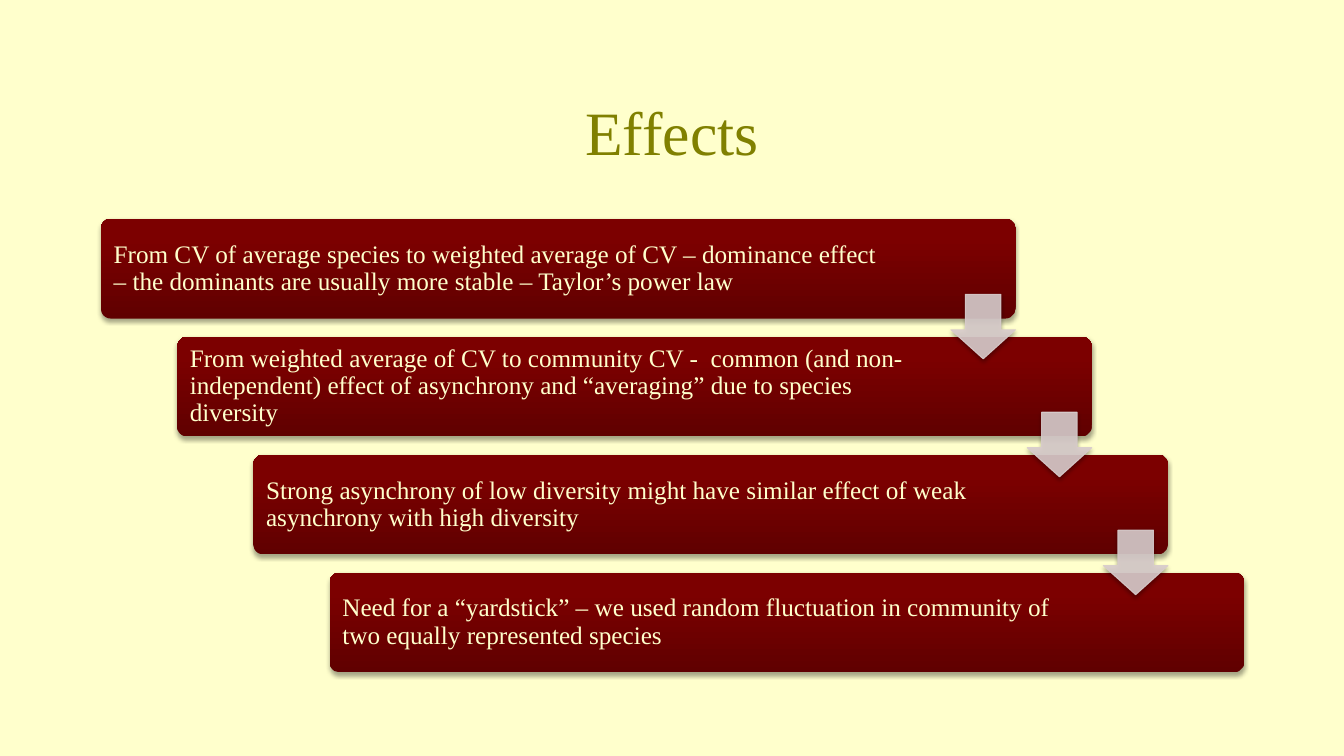
from copy import deepcopy
from dataclasses import dataclass

from lxml.etree import SubElement
from pptx import Presentation
from pptx.dml.color import RGBColor as Rgb
from pptx.enum.shapes import MSO_SHAPE as Shape
from pptx.enum.text import MSO_ANCHOR as Anchor, PP_ALIGN as Align
from pptx.oxml.ns import qn
from pptx.util import Inches, Pt


@dataclass(frozen=True)
class Theme:
    font: str = "Times New Roman"
    title_size: int = 44
    step_size: int = 18
    background: str = "FFFFCC"
    title: str = "808000"
    step_text: str = "FFFFCC"
    arrow: str = "D8CCCC"
    # Stops run from the bottom of a box to its top
    box_stops: tuple = ((0, "600000"), (0.8, "7C0000"), (1, "7D0000"))


THEME = Theme()

# Staircase of boxes: equal steps inside the content area
AREA_LEFT, AREA_TOP, AREA_WIDTH, AREA_HEIGHT = 1, 2.17, 11.34, 4.5
BOX_WIDTH, BOX_HEIGHT = 0.8 * AREA_WIDTH, 0.22 * AREA_HEIGHT
ARROW_SIZE = 0.64
INSET = 0.1

# Each step with the room kept free at its right
STEPS = [
    ("From CV of average species to weighted average of CV – dominance effect – "
     "the dominants are usually more stable – Taylor’s power law", 1.2),
    ("From weighted average of CV to community CV -  common (and non-independent) "
     "effect of asynchrony and “averaging” due to species diversity", 1.5),
    ("Strong asynchrony of low diversity might have similar effect of weak "
     "asynchrony with high diversity", 1.5),
    ("Need for a “yardstick” – we used random fluctuation in community of "
     "two equally represented species", 1.5),
]


def style_font(font, size, color):
    font.name = THEME.font
    font.size = Pt(size)
    font.color.rgb = Rgb.from_string(color)


def set_alpha(color, percent):
    SubElement(color, qn("a:alpha"), val=str(percent * 1000))


def add_shadow(shape):
    shape.shadow.inherit = False
    effects = shape.element.spPr.find(qn("a:effectLst"))
    shadow = SubElement(effects, qn("a:outerShdw"), blurRad=str(Pt(3.1)),
                        dist=str(Pt(1.8)), dir="5400000", rotWithShape="0")
    set_alpha(SubElement(shadow, qn("a:srgbClr"), val="000000"), 35)


def fill_gradient(shape, stops):
    fill = shape.fill
    fill.gradient()
    fill.gradient_angle = 90
    stop_list = shape.element.spPr.find(".//" + qn("a:gsLst"))
    while len(stop_list) < len(stops):
        stop_list.append(deepcopy(stop_list[-1]))
    for stop, (position, color) in zip(fill.gradient_stops, stops):
        stop.position = position
        stop.color.rgb = Rgb.from_string(color)


def add_title(page, text):
    title = page.shapes.title
    title.left, title.top = Inches(1), Inches(0.67)
    title.width, title.height = Inches(11.33), Inches(1.25)
    frame = title.text_frame
    frame.text = text
    frame.vertical_anchor = Anchor.MIDDLE
    para = frame.paragraphs[0]
    para.alignment = Align.CENTER
    style_font(para.font, THEME.title_size, THEME.title)


def add_step(page, left, top, text, free_right):
    box = page.shapes.add_shape(Shape.ROUNDED_RECTANGLE, Inches(left), Inches(top),
                                Inches(BOX_WIDTH), Inches(BOX_HEIGHT))
    box.adjustments[0] = 0.1
    fill_gradient(box, THEME.box_stops)
    box.line.fill.background()
    add_shadow(box)

    frame = box.text_frame
    frame.word_wrap = True
    frame.vertical_anchor = Anchor.MIDDLE
    frame.margin_left = frame.margin_top = frame.margin_bottom = Inches(INSET)
    frame.margin_right = Inches(free_right)
    frame.text = text
    para = frame.paragraphs[0]
    para.alignment = Align.LEFT
    para.line_spacing = 0.9
    style_font(para.font, THEME.step_size, THEME.step_text)


def add_arrow(page, left, top):
    arrow = page.shapes.add_shape(Shape.DOWN_ARROW, Inches(left), Inches(top),
                                  Inches(ARROW_SIZE), Inches(ARROW_SIZE))
    arrow.adjustments[0], arrow.adjustments[1] = 0.55, 0.45
    arrow.fill.solid()
    arrow.line.width = Pt(0.75)
    for paint in (arrow.fill.fore_color, arrow.line.color):
        paint.rgb = Rgb.from_string(THEME.arrow)
    for color in arrow.element.spPr.iter(qn("a:srgbClr")):
        set_alpha(color, 90)
    add_shadow(arrow)


def main():
    deck = Presentation()
    deck.slide_width, deck.slide_height = Inches(13.33), Inches(7.5)
    page = deck.slides.add_slide(deck.slide_layouts[5])
    page.background.fill.solid()
    page.background.fill.fore_color.rgb = Rgb.from_string(THEME.background)

    add_title(page, "Effects")

    # Boxes go down and right by the same step
    gaps = len(STEPS) - 1
    step_x = (AREA_WIDTH - BOX_WIDTH) / gaps
    step_y = (AREA_HEIGHT - BOX_HEIGHT) / gaps
    corners = [(AREA_LEFT + i * step_x, AREA_TOP + i * step_y)
               for i in range(len(STEPS))]
    for (left, top), (text, free_right) in zip(corners, STEPS):
        add_step(page, left, top, text, free_right)

    # Arrows bridge each pair, flush with the upper box's right edge
    for left, top in corners[:-1]:
        add_arrow(page, left + BOX_WIDTH - ARROW_SIZE, top + 0.75)

    deck.save("out.pptx")


if __name__ == "__main__":
    main()
